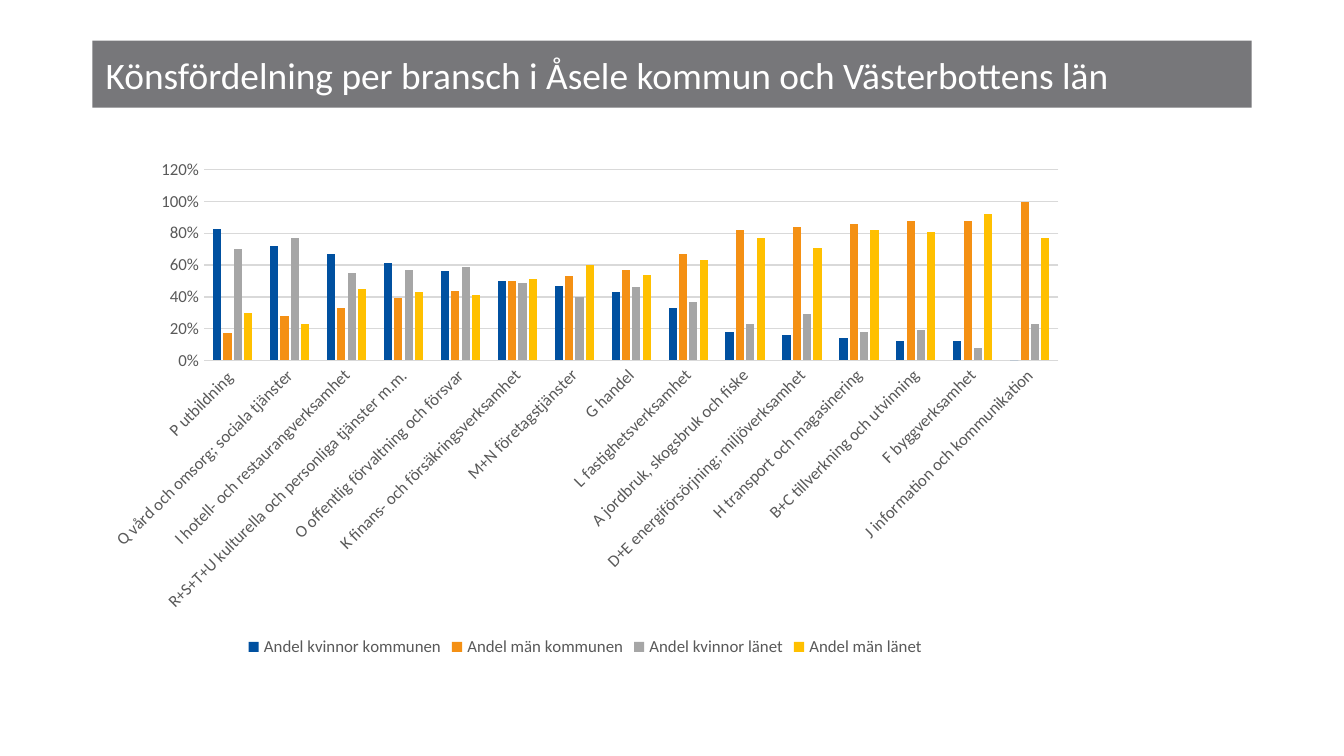
"""Build a slide with shares of women and men by industry."""
from dataclasses import dataclass

from pptx import Presentation
from pptx.chart.data import CategoryChartData
from pptx.dml.color import RGBColor
from pptx.enum.chart import XL_CHART_TYPE, XL_LEGEND_POSITION, XL_TICK_MARK
from pptx.enum.shapes import MSO_SHAPE
from pptx.enum.text import MSO_ANCHOR, PP_ALIGN
from pptx.util import Pt

SCALE = 9525
FONT = "Calibri"
COLORS = {
    "band": "77777A", "white": "FFFFFF", "text": "595959", "grid": "D9D9D9",
    "blue": "0050A0", "orange": "F49014", "gray": "A6A6A6", "yellow": "FFC000",
}


@dataclass(frozen=True)
class Box:
    left: int
    top: int
    width: int
    height: int

    def emu(self) -> tuple[int, ...]:
        return tuple(n * SCALE for n in (self.left, self.top, self.width, self.height))


@dataclass(frozen=True)
class Series:
    name: str
    color: str
    shares: tuple[float, ...]


TRADES = (
    "P utbildning ",
    "Q vård och omsorg; sociala tjänster",
    "I hotell- och restaurangverksamhet",
    "R+S+T+U kulturella och personliga tjänster m.m.",
    "O offentlig förvaltning och försvar",
    "K finans- och försäkringsverksamhet",
    "M+N företagstjänster",
    "G handel",
    "L fastighetsverksamhet",
    "A jordbruk, skogsbruk och fiske",
    "D+E energiförsörjning; miljöverksamhet",
    "H transport och magasinering",
    "B+C tillverkning och utvinning",
    "F byggverksamhet",
    "J information och kommunikation",
)
GROUPS = (
    Series("Andel kvinnor kommunen", "blue",
           (0.83, 0.72, 0.67, 0.61, 0.56, 0.5, 0.47, 0.43, 0.33, 0.18, 0.16, 0.14, 0.12, 0.12, 0)),
    Series("Andel män kommunen", "orange",
           (0.17, 0.28, 0.33, 0.39, 0.44, 0.5, 0.53, 0.57, 0.67, 0.82, 0.84, 0.86, 0.88, 0.88, 1)),
    Series("Andel kvinnor länet", "gray",
           (0.7, 0.77, 0.55, 0.57, 0.59, 0.49, 0.4, 0.46, 0.37, 0.23, 0.29, 0.18, 0.19, 0.08, 0.23)),
    Series("Andel män länet", "yellow",
           (0.3, 0.23, 0.45, 0.43, 0.41, 0.51, 0.6, 0.54, 0.63, 0.77, 0.71, 0.82, 0.81, 0.92, 0.77)),
)


def rgb(key: str) -> RGBColor:
    return RGBColor.from_string(COLORS[key])


def style(font, size: int, color: str) -> None:
    font.name, font.size, font.color.rgb = FONT, Pt(size), rgb(color)


def write(frame, text: str, *, size: int, color: str, align=PP_ALIGN.LEFT) -> None:
    frame.word_wrap = True
    frame.vertical_anchor = MSO_ANCHOR.MIDDLE
    para = frame.paragraphs[0]
    para.alignment = align
    run = para.add_run()
    run.text = text
    style(run.font, size, color)


def rule(line) -> None:
    line.color.rgb = rgb("grid")
    line.width = Pt(0.75)


def draw_title(slide, box: Box, text: str) -> None:
    band = slide.shapes.add_shape(MSO_SHAPE.RECTANGLE, *box.emu())
    band.shadow.inherit = False
    band.fill.solid()
    band.fill.fore_color.rgb = rgb("band")
    band.line.fill.background()
    write(band.text_frame, text, size=20, color="white")


def draw_chart(slide, box: Box) -> None:
    data = CategoryChartData(number_format="0%")
    data.categories = TRADES
    for group in GROUPS:
        data.add_series(group.name, group.shares)
    chart = slide.shapes.add_chart(XL_CHART_TYPE.COLUMN_CLUSTERED, *box.emu(), data).chart
    chart.has_title = False
    style(chart.font, 9, "text")

    plot = chart.plots[0]
    plot.gap_width, plot.overlap, plot.vary_by_categories = 219, -27, False
    for bars, group in zip(plot.series, GROUPS):
        bars.format.fill.solid()
        bars.format.fill.fore_color.rgb = rgb(group.color)
        bars.invert_if_negative = False

    base, side = chart.category_axis, chart.value_axis
    for axis in (base, side):
        axis.major_tick_mark = axis.minor_tick_mark = XL_TICK_MARK.NONE
        style(axis.tick_labels.font, 9, "text")
    rule(base.format.line)
    turn = base._element.txPr.bodyPr
    turn.set("rot", "-2700000")
    turn.set("vert", "horz")
    side.minimum_scale, side.maximum_scale, side.major_unit = 0, 1.2, 0.2
    side.format.line.fill.background()
    side.has_major_gridlines = True
    rule(side.major_gridlines.format.line)
    side.tick_labels.number_format = "0%"
    side.tick_labels.number_format_is_linked = False

    chart.has_legend = True
    chart.legend.position = XL_LEGEND_POSITION.BOTTOM
    chart.legend.include_in_layout = False
    style(chart.legend.font, 9, "text")


def main() -> None:
    deck = Presentation()
    deck.slide_width, deck.slide_height = 960 * SCALE, 540 * SCALE
    slide = deck.slides.add_slide(deck.slide_layouts[6])
    draw_title(slide, Box(66, 29, 828, 48),
               "Könsfördelning per bransch i Åsele kommun och Västerbottens län")
    draw_chart(slide, Box(66, 107, 704, 366))
    deck.save("out.pptx")


if __name__ == "__main__":
    main()
